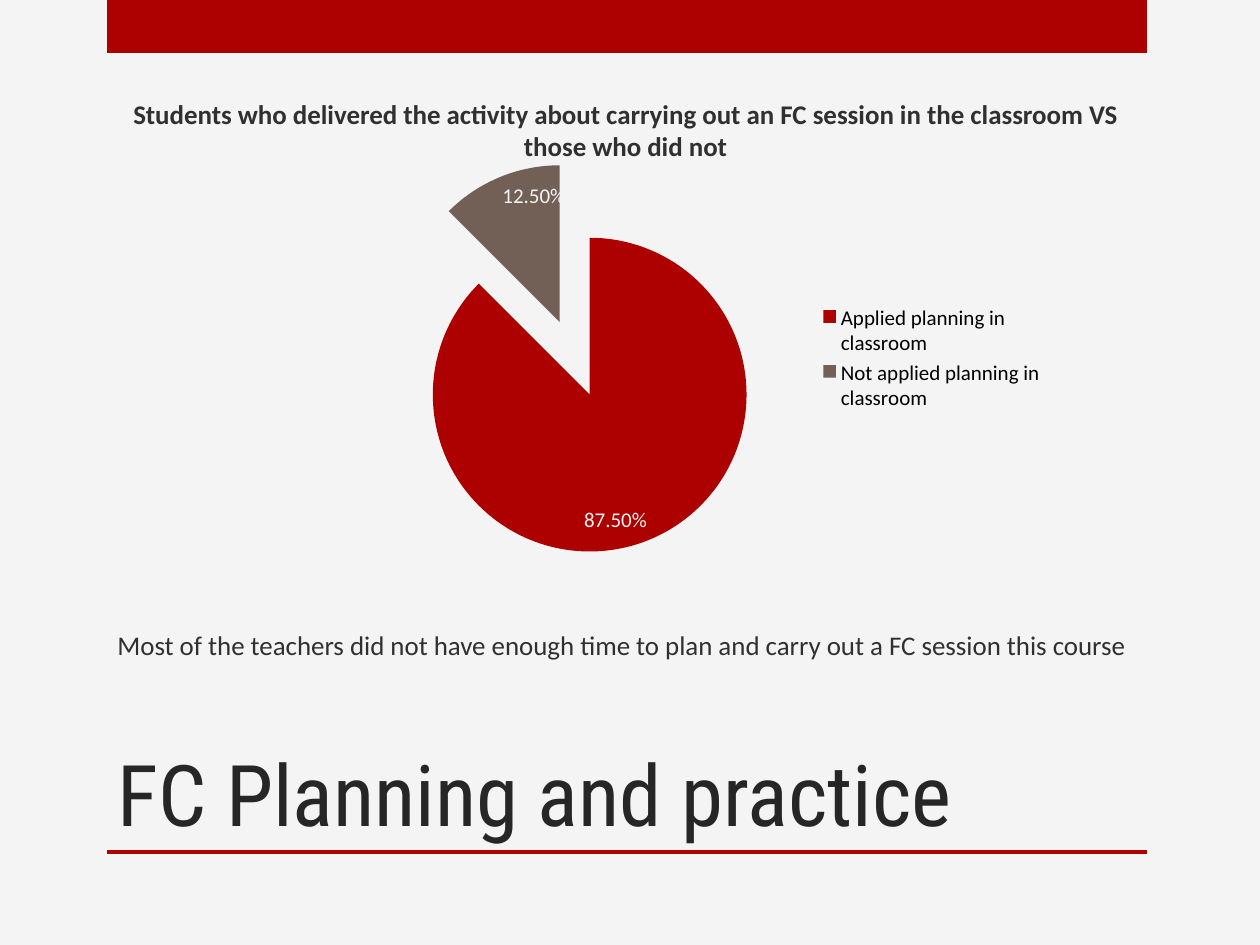
from dataclasses import dataclass

from lxml import etree
from pptx import Presentation
from pptx.chart.data import CategoryChartData
from pptx.dml.color import RGBColor
from pptx.enum.chart import XL_CHART_TYPE, XL_LABEL_POSITION, XL_LEGEND_POSITION
from pptx.enum.shapes import MSO_SHAPE
from pptx.enum.text import MSO_ANCHOR, MSO_AUTO_SIZE, PP_ALIGN
from pptx.oxml.ns import qn
from pptx.slide import Slide
from pptx.util import Pt

PX = 914400 / 126
RECTANGLE = MSO_SHAPE.RECTANGLE
PIE = XL_CHART_TYPE.PIE
INSIDE_END = XL_LABEL_POSITION.INSIDE_END
LEGEND_RIGHT = XL_LEGEND_POSITION.RIGHT
MIDDLE, BOTTOM = MSO_ANCHOR.MIDDLE, MSO_ANCHOR.BOTTOM
LEFT, CENTER = PP_ALIGN.LEFT, PP_ALIGN.CENTER
NO_AUTOFIT = MSO_AUTO_SIZE.NONE


def px(*lengths):
    return [round(length * PX) for length in lengths]


def paint(fill, color):
    fill.solid()
    fill.fore_color.rgb = RGBColor.from_string(color)


def style_font(font, name, size, color, bold=False):
    font.name = name
    font.size = Pt(size)
    font.bold = bold
    font.color.rgb = RGBColor.from_string(color)


def write(frame, text, font, size, color, bold=False, align=LEFT, anchor=MIDDLE, before=0):
    frame.word_wrap = True
    frame.auto_size = NO_AUTOFIT
    frame.vertical_anchor = anchor
    paragraph = frame.paragraphs[0]
    paragraph.alignment = align
    paragraph.space_before = Pt(before)
    run = paragraph.add_run()
    run.text = text
    style_font(run.font, font, size, color, bold)


@dataclass
class Deck:
    slide: Slide
    accent: str = "AD0101"
    secondary: str = "726056"
    paper: str = "F4F4F4"
    heading: str = "262626"
    ink: str = "303030"
    heading_font: str = "Roboto Condensed"
    body_font: str = "Calibri"

    def background(self):
        paint(self.slide.background.fill, self.paper)

    def bar(self, *box):
        bar = self.slide.shapes.add_shape(RECTANGLE, *px(*box))
        bar.shadow.inherit = False
        paint(bar.fill, self.accent)
        bar.line.fill.background()

    def title(self, text, *box):
        title = self.slide.shapes.title
        title.left, title.top, title.width, title.height = px(*box)
        write(title.text_frame, text, self.heading_font, 48.6, self.heading, anchor=BOTTOM)

    def statement(self, text, *box, bold=False, align=LEFT):
        statement = self.slide.shapes.add_textbox(*px(*box))
        write(statement.text_frame, text, self.body_font, 15.4, self.ink,
              bold=bold, align=align, before=3)

    def pie(self, shares, explosion, *box):
        data = CategoryChartData(number_format="0.00%")
        data.categories = list(shares)
        data.add_series("Series 1", list(shares.values()))
        chart = self.slide.shapes.add_chart(PIE, *px(*box), data).chart
        style_font(chart.font, self.body_font, 12, "000000")
        chart.has_title = False
        chart.has_legend = True
        chart.legend.position = LEGEND_RIGHT
        chart.legend.include_in_layout = False

        plot = chart.plots[0]
        plot.vary_by_categories = True
        series = plot.series[0]
        paint(series.format.fill, self.accent)
        offset = etree.Element(qn("c:explosion"), val=str(explosion))
        series.format.fill
        series._element.find(qn("c:spPr")).addnext(offset)
        for index, color in enumerate((self.accent, self.secondary)):
            paint(series.points[index].format.fill, color)

        labels = series.data_labels
        labels.show_value = True
        labels.number_format = "0.00%"
        labels.number_format_is_linked = False
        labels.position = INSIDE_END
        style_font(labels.font, self.body_font, 12, self.paper)


def main():
    presentation = Presentation()
    presentation.slide_width, presentation.slide_height = px(1260, 945)
    deck = Deck(presentation.slides.add_slide(presentation.slide_layouts[5]))
    deck.background()
    deck.bar(107, 0, 1040, 53)
    deck.bar(107, 850, 1040, 4)
    deck.title("FC Planning and practice", 105, 630, 935, 220)
    shares = {"Applied planning in classroom": 0.875,
              "Not applied planning in classroom": 0.125}
    deck.pie(shares, 25, 333, 145, 724, 427)
    deck.statement("Students who delivered the activity about carrying out an FC session "
                   "in the classroom VS those who did not",
                   105, 95, 1041, 70, bold=True, align=CENTER)
    deck.statement("Most of the teachers did not have enough time to plan and carry out "
                   "a FC session this course", 105, 610, 1041, 70)
    presentation.save("out.pptx")


if __name__ == "__main__":
    main()
